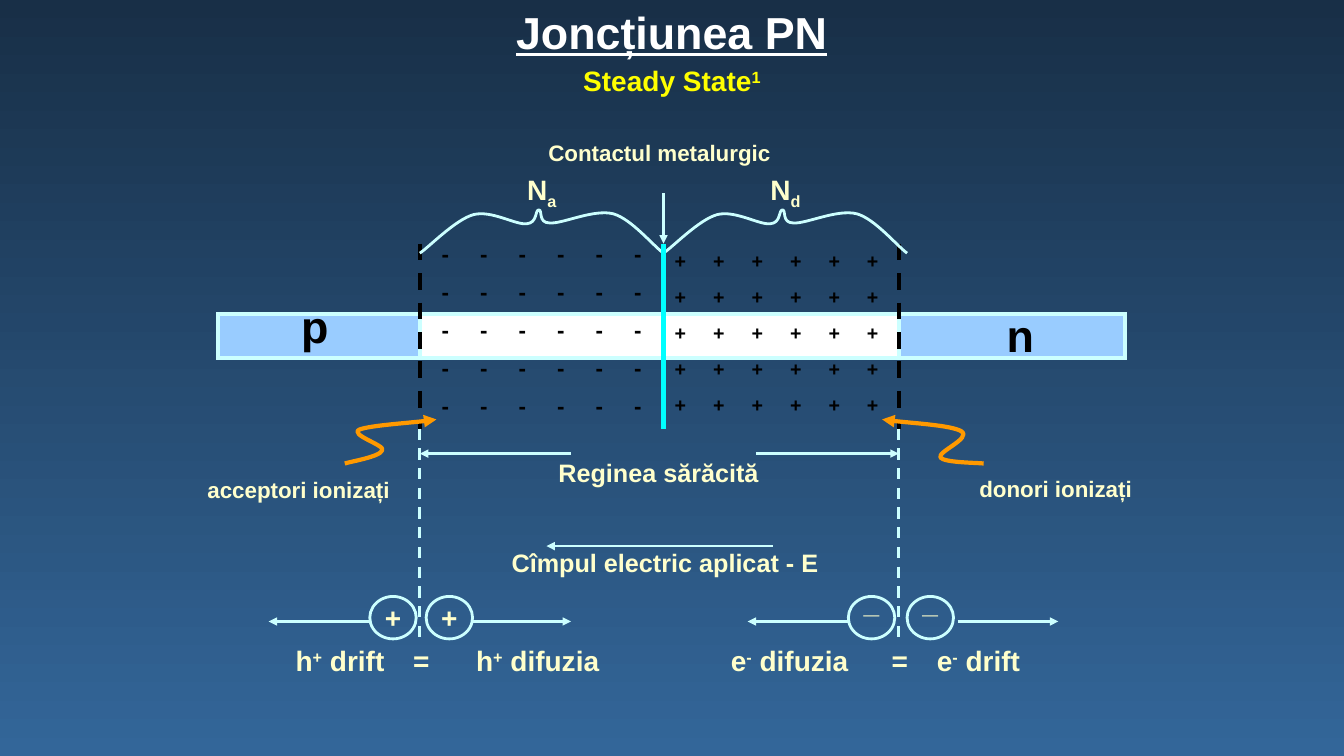
from dataclasses import dataclass

from lxml import etree
from pptx import Presentation
from pptx.dml.color import RGBColor
from pptx.enum import dml, shapes, text
from pptx.oxml.ns import qn
from pptx.util import Cm, Pt


@dataclass(frozen=True)
class Theme:
    font: str = "Arial"
    sky_top: str = "182F47"
    sky_bottom: str = "336699"
    white: str = "FFFFFF"
    yellow: str = "FFFF00"
    cream: str = "FFFFCC"
    black: str = "000000"
    doped: str = "99CCFF"
    pale: str = "CCFFFF"
    cyan: str = "00FFFF"
    orange: str = "FF9900"
    heading: int = 32
    body: int = 20
    caption: int = 18
    note: int = 16
    plus: int = 14
    thin: int = 2
    thick: int = 3


THEME = Theme()
BAR_LEFT, P_EDGE, CONTACT, N_EDGE, BAR_RIGHT = 5.5, 10.58, 16.72, 22.65, 28.36
EDGE_TOP, EDGE_MIDDLE, EDGE_BOTTOM = 6.14, 10.8, 16.09
BRACE_BASE = 6.38
BRACE_SHIFT = CONTACT - P_EDGE
BRACE = [(0, 0), (0.23, -0.15), (0.89, -0.84), (1.35, -0.97), (1.8, -1.09),
         (2.41, -0.71), (2.69, -0.74), (2.97, -0.76), (2.9, -1.09), (3, -1.09),
         (3.1, -1.09), (2.97, -0.76), (3.28, -0.76), (3.61, -0.74), (4.39, -1.12),
         (4.88, -0.99), (5.33, -0.86), (5.87, -0.2), (6.14, 0)]
ACCEPTOR_WAVE = [(8.69, 11.68), (8.84, 11.63), (9.58, 11.51), (9.63, 11.35),
                 (9.75, 11.23), (8.76, 10.95), (9.07, 10.82), (9.37, 10.72),
                 (10.59, 10.64), (11, 10.57)]
DONOR_WAVE = [(24.79, 11.68), (24.61, 11.66), (23.8, 11.66), (23.7, 11.53),
              (23.62, 11.38), (24.49, 11.05), (24.23, 10.87), (23.98, 10.72),
              (22.63, 10.64), (22.23, 10.57)]


def rgb(color):
    return RGBColor.from_string(color)


def style_font(paragraph, size, color):
    font = paragraph.font
    font.name, font.size, font.bold = THEME.font, Pt(size), True
    font.color.rgb = rgb(color)


def style_line(line, color, width, dashed=False, arrow=False, miter=False):
    line.color.rgb = rgb(color)
    line.width = Pt(width)
    if dashed:
        line.dash_style = dml.MSO_LINE.DASH
    if miter:
        etree.SubElement(line._get_or_add_ln(), qn("a:miter"), lim="800000")
    if arrow:
        etree.SubElement(line._get_or_add_ln(), qn("a:tailEnd"), type="triangle")


def add_label(slide, box, parts, size=THEME.body, color=THEME.cream,
              underline=None, spacing=None):
    frame = slide.shapes.add_textbox(*map(Cm, box)).text_frame
    frame.word_wrap = True
    line = frame.paragraphs[0]
    line.alignment = text.PP_ALIGN.CENTER
    line.line_spacing = spacing
    style_font(line, size, color)
    line.font.underline = underline
    for words, baseline in [(parts, 0)] if isinstance(parts, str) else parts:
        run = line.add_run()
        run.text = words
        if baseline:
            run._r.get_or_add_rPr().set("baseline", str(baseline * 1000))


def add_charges(slide, box, sign, size, inset, gap, rows=5, columns=6, pitch=0.97):
    frame = slide.shapes.add_textbox(*map(Cm, box)).text_frame
    frame.word_wrap = True
    frame.margin_left = Cm(inset)
    for row in range(rows):
        line = frame.add_paragraph() if row else frame.paragraphs[0]
        line.text = "\t".join(sign * columns)
        line.space_before = Pt(gap if row else 0)
        style_font(line, size, THEME.black)
        stops = etree.Element(qn("a:tabLst"))
        for column in range(1, columns):
            etree.SubElement(stops, qn("a:tab"), pos=str(Cm(column * pitch)), algn="l")
        properties = line._p.get_or_add_pPr()
        properties.find(qn("a:defRPr")).addprevious(stops)


def add_line(slide, start, end, color=THEME.pale, width=THEME.thin, **style):
    line = slide.shapes.add_connector(
        shapes.MSO_CONNECTOR.STRAIGHT, *map(Cm, start + end))
    style_line(line.line, color, width, **style)
    etree.SubElement(line._element.spPr, qn("a:effectLst"))


def add_region(slide, left, right, fill):
    region = slide.shapes.add_shape(
        shapes.MSO_SHAPE.RECTANGLE, *map(Cm, (left, 7.91, right - left, 1.12)))
    region.shadow.inherit = False
    region.fill.solid()
    region.fill.fore_color.rgb = rgb(fill)
    style_line(region.line, THEME.pale, THEME.thick, miter=True)


def bend_segments(curve):
    segments = list(curve._element.iter(qn("a:lnTo")))
    for first in range(0, len(segments), 3):
        bend = etree.Element(qn("a:cubicBezTo"))
        segments[first].addprevious(bend)
        for segment in segments[first:first + 3]:
            bend.append(segment[0])
            segment.getparent().remove(segment)


def add_curve(slide, knots, color, width, arrow=False):
    start, *others = [tuple(map(Cm, knot)) for knot in knots]
    builder = slide.shapes.build_freeform(*start)
    builder.add_line_segments(others, close=False)
    curve = builder.convert_to_shape()
    bend_segments(curve)
    curve.shadow.inherit = False
    curve.fill.background()
    style_line(curve.line, color, width, arrow=arrow)


def add_carrier(slide, left, sign):
    carrier = slide.shapes.add_shape(
        shapes.MSO_SHAPE.OVAL, *map(Cm, (left, 15.03, 1.17, 1.07)))
    carrier.shadow.inherit = False
    carrier.fill.background()
    style_line(carrier.line, THEME.pale, THEME.thin)
    frame = carrier.text_frame
    frame.word_wrap = False
    frame.vertical_anchor = text.MSO_ANCHOR.MIDDLE
    if sign == "_":
        frame.vertical_anchor = text.MSO_ANCHOR.BOTTOM
        frame.margin_top, frame.margin_bottom = 0, Cm(0.34)
    line = frame.paragraphs[0]
    line.text = sign
    line.alignment = text.PP_ALIGN.CENTER
    style_font(line, THEME.body, THEME.cream)


def paint_background(slide):
    fill = slide.background.fill
    fill.gradient()
    fill.gradient_angle = 270
    for stop, color in zip(fill.gradient_stops, (THEME.sky_top, THEME.sky_bottom)):
        stop.color.rgb = rgb(color)


def draw_junction(slide):
    edges = (BAR_LEFT, P_EDGE, CONTACT, N_EDGE, BAR_RIGHT)
    fills = (THEME.doped, THEME.white, THEME.white, THEME.doped)
    for left, right, fill in zip(edges, edges[1:], fills):
        add_region(slide, left, right, fill)
    for edge in (P_EDGE, N_EDGE):
        add_line(slide, (edge, EDGE_TOP), (edge, EDGE_MIDDLE),
                 THEME.black, THEME.thick, dashed=True)
        add_line(slide, (edge, EDGE_MIDDLE), (edge, EDGE_BOTTOM), dashed=True)
    add_label(slide, (6.77, 7.41, 2.33, 1.6), "p", THEME.heading, THEME.black)
    add_label(slide, (24.55, 7.62, 2.33, 1.6), "n", THEME.heading, THEME.black)
    add_charges(slide, (10.8, 5.93, 5.72, 5), "-", THEME.note, 0.33, 8)
    add_charges(slide, (CONTACT, 6.14, 5.72, 4.8), "+", THEME.plus, 0.28, 9)
    for side, dopant in enumerate("ad"):
        shift = side * BRACE_SHIFT
        add_curve(slide, [(P_EDGE + shift + x, BRACE_BASE + y) for x, y in BRACE],
                  THEME.pale, THEME.thin)
        add_label(slide, (12.49 + shift, 4.23, 2.33, 1.09), [("N", 0), (dopant, -25)])
    add_line(slide, (CONTACT, 4.87), (CONTACT, EDGE_TOP), arrow=True)
    add_line(slide, (CONTACT, EDGE_TOP), (CONTACT, EDGE_MIDDLE), THEME.cyan, THEME.thick)
    add_label(slide, (13.55, 3.39, 6.14, 0.93), "Contactul metalurgic", THEME.note)


def draw_depletion(slide):
    add_label(slide, (13.46, 11.48, 6.27, 0.93), "Reginea sărăcită",
              THEME.caption, spacing=0.9)
    for wave in (ACCEPTOR_WAVE, DONOR_WAVE):
        add_curve(slide, wave, THEME.orange, THEME.thick, arrow=True)
    add_label(slide, (4.72, 11.88, 5.61, 0.93), "acceptori ionizați", THEME.note)
    add_label(slide, (24.13, 11.86, 4.95, 0.93), "donori ionizați", THEME.note)
    add_label(slide, (12.34, 13.76, 8.84, 0.93), "Cîmpul electric aplicat - E",
              THEME.caption, spacing=0.9)
    for start, end, level in ((14.39, P_EDGE, 11.43), (19.05, N_EDGE, 11.43),
                              (19.48, 13.77, 13.76)):
        add_line(slide, (start, level), (end, level), arrow=True)


def draw_currents(slide):
    for left, sign in ((10.74, "+"), (9.32, "+"), (21.38, "_"), (22.86, "_")):
        add_carrier(slide, left, sign)
    for start, end in ((11.86, 14.39), (24.13, 26.67), (21.38, 18.84), (9.31, 6.77)):
        add_line(slide, (start, 15.66), (end, 15.66), arrow=True)
    for left, width, carrier, charge, flow in (
            (6.56, 4.02, "h", "+", " drift"), (11.22, 4.66, "h", "+", " difuzia"),
            (17.57, 4.66, "e", "-", " difuzia"), (22.65, 4.02, "e", "-", " drift")):
        add_label(slide, (left, EDGE_BOTTOM, width, 1.09),
                  [(carrier, 0), (charge, 30), (flow, 0)])
    for left in (10.16, 22.22):
        add_label(slide, (left, EDGE_BOTTOM, 0.85, 1.09), "=")


def main():
    deck = Presentation()
    deck.slide_width, deck.slide_height = Cm(33.87), Cm(19.05)
    slide = deck.slides.add_slide(deck.slide_layouts[6])
    paint_background(slide)
    add_label(slide, (6.77, 0, 20.32, 1.6), "Joncțiunea PN",
              THEME.heading, THEME.white, underline=True)
    add_label(slide, (12.49, 1.48, 8.89, 1.09), [("Steady State", 0), ("1", 30)],
              color=THEME.yellow)
    draw_junction(slide)
    draw_depletion(slide)
    draw_currents(slide)
    deck.save("out.pptx")


if __name__ == "__main__":
    main()
